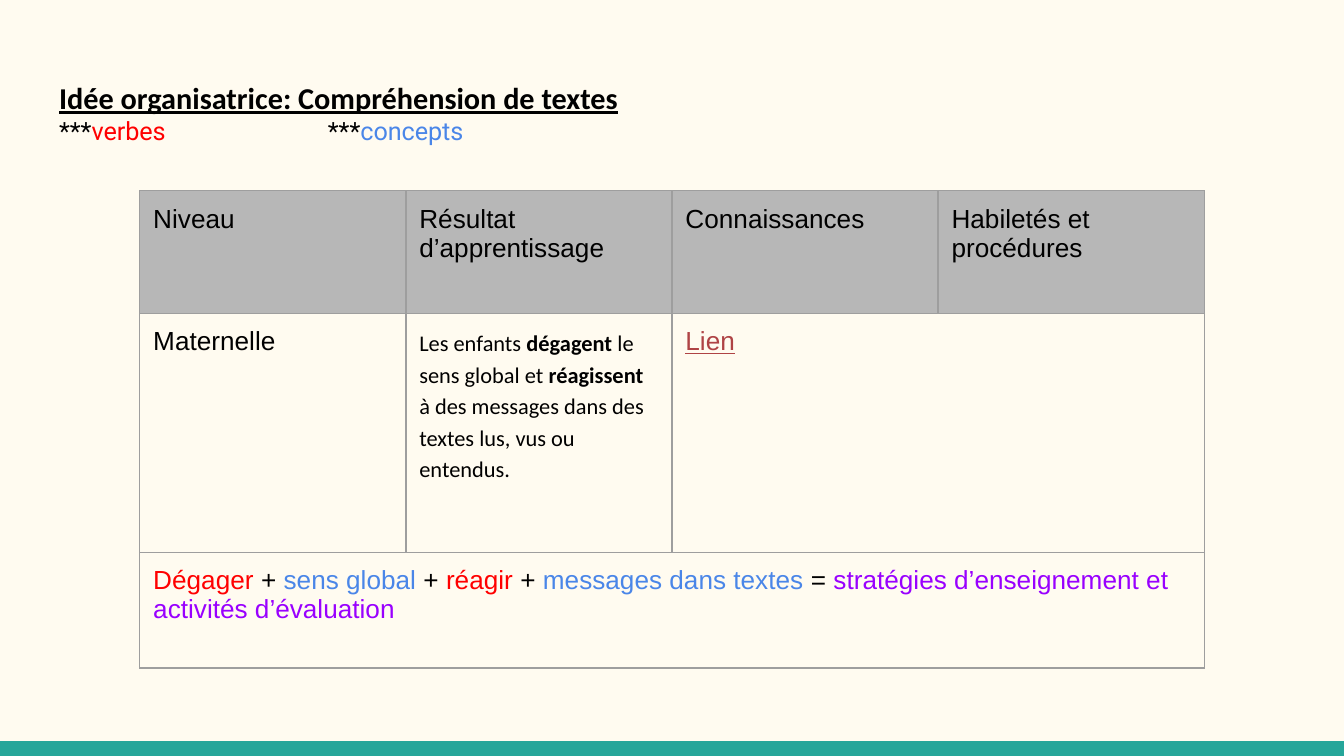
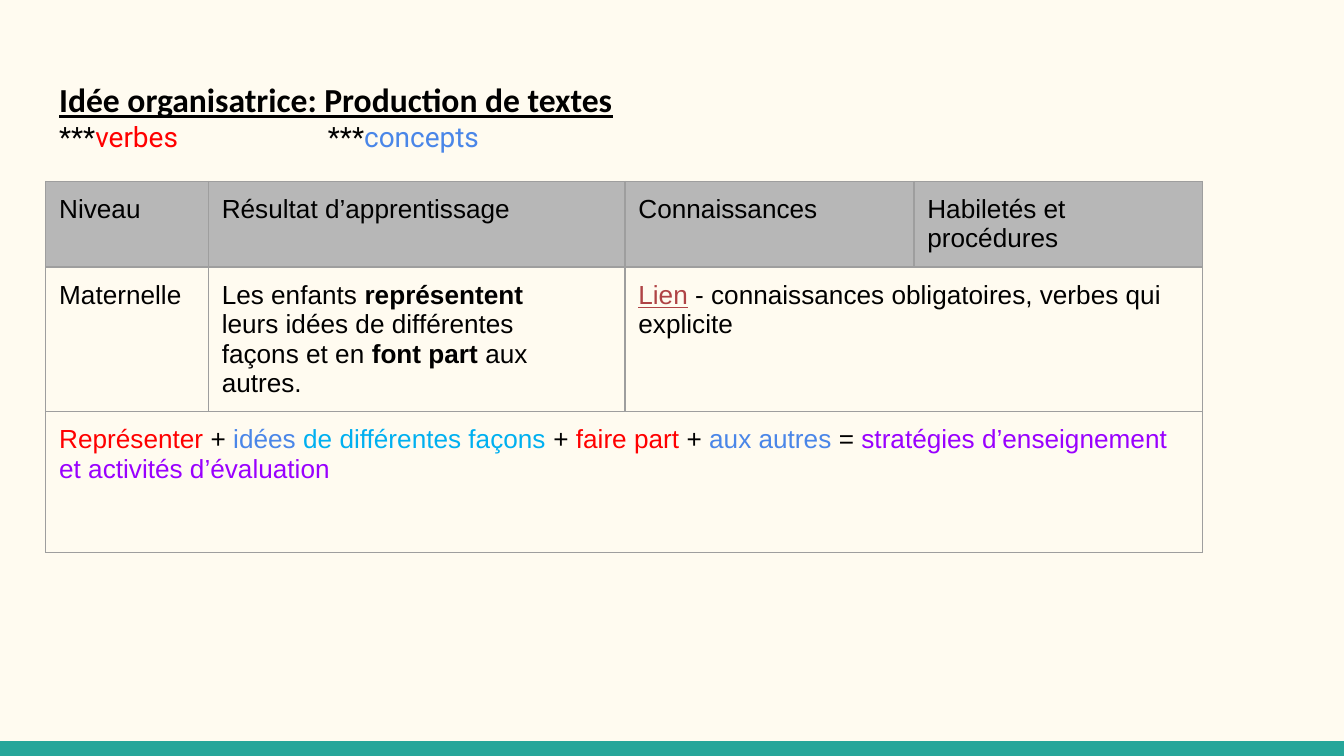
from lxml import etree
from pptx import Presentation
from pptx import util as u
from pptx.dml.color import RGBColor
from pptx.enum import shapes, text
from pptx.oxml.ns import qn

WIDTH = 10
HEIGHT = WIDTH * 9 / 16
MARGIN = 0.34
INSET = 0.1
CREAM, TEAL, GREY, BORDER = "FFFBF0", "26A69A", "B7B7B7", "9E9E9E"
BLACK, RED, BLUE, SKY, PURPLE, LINK = "000000", "FF0000", "4A86E8", "00B0F0", "9900FF", "AF4345"

HEADERS = ["Niveau", "Résultat d’apprentissage", "Connaissances", "Habiletés et procédures"]
LEVEL = "Maternelle"
LEGEND = [("***",), ("verbes", RED), ("\t\t***",), ("concepts", BLUE)]
OUTCOME = ("stratégies d’enseignement et activités d’évaluation", PURPLE)
LIEN = ("Lien", LINK, "u")

# A span is (words, colour, style), where style holds "b" for bold and "u" for underlined.
SLIDES = [
    dict(
        title="Idée organisatrice: Compréhension de textes", title_size=16.2, legend_size=13.5,
        left=1.04, top=1.42, columns=[1.98] * 4, rows=[0.91, 1.78, 0.86],
        result=[[("Les enfants",), (" dégagent ", BLACK, "b"), ("le sens global et",),
                 (" réagissent", BLACK, "b"),
                 (" à des messages dans des textes lus, vus ou entendus.",)]],
        result_style=dict(font="Calibri", size=12, spacing=1.15),
        knowledge=[LIEN],
        formula=[("Dégager", RED), (" + ",), ("sens global", BLUE), (" + ",), ("réagir", RED),
                 (" + ",), ("messages dans textes", BLUE), (" = ",), OUTCOME],
    ),
    dict(
        title="Idée organisatrice: Production de textes", title_size=18, legend_size=15,
        left=MARGIN, top=1.35, columns=[1.21, 3.1, 2.15, 2.15], rows=[0.54, 1.05, 1.05],
        result=[[("Les enfants ",), ("représentent", BLACK, "b")],
                [("leurs idées de différentes",)],
                [("façons et en ",), ("font part ", BLACK, "b"), ("aux",)],
                [("autres.",)]],
        result_style={},
        knowledge=[LIEN, (" - connaissances obligatoires, verbes qui explicite",)],
        formula=[("Représenter", RED), (" + ",), ("idées ", BLUE), ("de différentes façons ", SKY),
                 ("+ ",), ("faire part", RED), (" + ",), ("aux autres ", BLUE), ("= ",), OUTCOME],
    ),
]


def rgb(value):
    return RGBColor.from_string(value)


def add_span(para, font, size, words, colour=BLACK, style=""):
    run = para.add_run()
    run.text = words
    run.font.name, run.font.size = font, u.Pt(size)
    run.font.color.rgb = rgb(colour)
    run.font.bold, run.font.underline = "b" in style, "u" in style


def write(para, spans, font="Arial", size=14, spacing=None):
    para.alignment = text.PP_ALIGN.LEFT
    if spacing:
        para.line_spacing = spacing
    for span in spans:
        add_span(para, font, size, *span)


def set_insets(target):
    target.margin_left = target.margin_right = u.Inches(INSET)
    target.margin_top = target.margin_bottom = u.Inches(INSET)


def set_tabs(para, stops):
    tabs = etree.SubElement(para._p.get_or_add_pPr(), qn("a:tabLst"))
    for stop in stops:
        etree.SubElement(tabs, qn("a:tab"), pos=str(u.Inches(stop)), algn="l")


def set_borders(cell):
    properties = cell._tc.get_or_add_tcPr()
    for side in ("lnL", "lnR", "lnT", "lnB"):
        line = etree.SubElement(properties, qn(f"a:{side}"), w=str(u.Pt(0.75)))
        fill = etree.SubElement(line, qn("a:solidFill"))
        etree.SubElement(fill, qn("a:srgbClr"), val=BORDER)


def style_master(deck, slide):
    """Give every slide the cream background and the teal band at its foot."""
    master = deck.slide_master
    master.background.fill.solid()
    master.background.fill.fore_color.rgb = rgb(CREAM)
    band_height = 0.11
    band = slide.shapes.add_shape(shapes.MSO_SHAPE.RECTANGLE, 0, u.Inches(HEIGHT - band_height),
                                  u.Inches(WIDTH), u.Inches(band_height))
    band.shadow.inherit = False
    band.fill.solid()
    band.fill.fore_color.rgb = rgb(TEAL)
    band.line.fill.background()
    band._element.nvSpPr.cNvPr.id = 100
    master.shapes._spTree.insert(2, band._element)


def add_title(slide, content):
    title = slide.shapes.title
    title.left, title.top = u.Inches(MARGIN), u.Inches(0.49)
    title.width, title.height = u.Inches(WIDTH - 2 * MARGIN), u.Inches(0.67)
    frame = title.text_frame
    set_insets(frame)
    frame.word_wrap = True
    frame.auto_size = text.MSO_AUTO_SIZE.NONE
    frame.vertical_anchor = text.MSO_ANCHOR.TOP
    write(frame.paragraphs[0], [(content["title"], BLACK, "bu")], "Calibri", content["title_size"])
    legend = frame.add_paragraph()
    write(legend, LEGEND, "Roboto", content["legend_size"])
    set_tabs(legend, [1, 2])


def fill_cell(cell, paragraphs, **style):
    frame = cell.text_frame
    for index, spans in enumerate(paragraphs):
        write(frame.add_paragraph() if index else frame.paragraphs[0], spans, **style)


def add_grid(slide, content):
    columns, rows = content["columns"], content["rows"]
    table = slide.shapes.add_table(
        len(rows), len(columns), u.Inches(content["left"]), u.Inches(content["top"]),
        u.Inches(sum(columns)), u.Inches(sum(rows))).table
    table.first_row = table.horz_banding = False
    for column, width in zip(table.columns, columns):
        column.width = u.Inches(width)
    for row, height in zip(table.rows, rows):
        row.height = u.Inches(height)
    for cell in table.iter_cells():
        set_insets(cell)
        set_borders(cell)
        cell.fill.background()
    table.cell(1, 2).merge(table.cell(1, 3))
    table.cell(2, 0).merge(table.cell(2, 3))

    for index, header in enumerate(HEADERS):
        cell = table.cell(0, index)
        cell.fill.solid()
        cell.fill.fore_color.rgb = rgb(GREY)
        fill_cell(cell, [[(header,)]])
    fill_cell(table.cell(1, 0), [[(LEVEL,)]])
    fill_cell(table.cell(1, 1), content["result"], **content["result_style"])
    fill_cell(table.cell(1, 2), [content["knowledge"]])
    fill_cell(table.cell(2, 0), [content["formula"]])


def main():
    deck = Presentation()
    deck.slide_width, deck.slide_height = u.Inches(WIDTH), u.Inches(HEIGHT)
    title_only = deck.slide_layouts[5]
    for index, content in enumerate(SLIDES):
        slide = deck.slides.add_slide(title_only)
        if index == 0:
            style_master(deck, slide)
        add_title(slide, content)
        add_grid(slide, content)
    deck.save("out.pptx")


if __name__ == "__main__":
    main()
